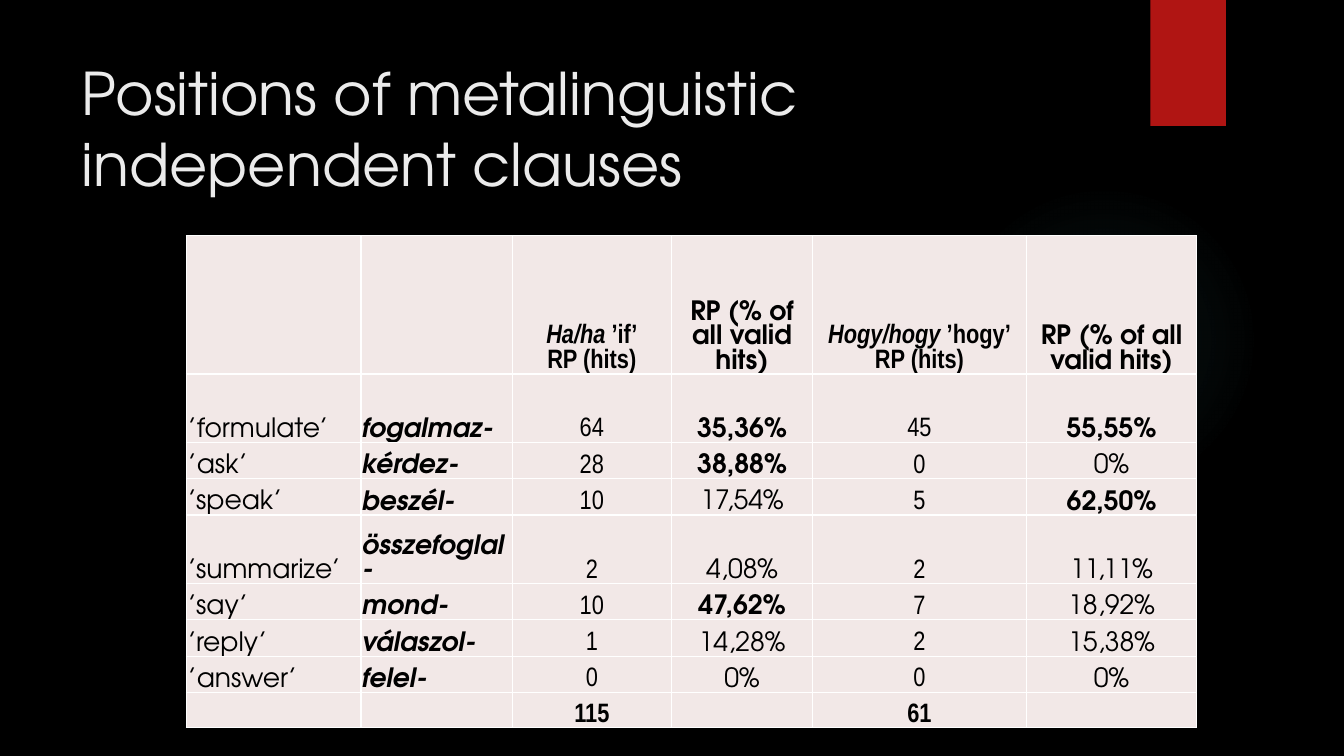
from dataclasses import dataclass

from lxml.etree import SubElement
from pptx import Presentation
from pptx.dml.color import RGBColor
from pptx.enum.shapes import MSO_SHAPE
from pptx.enum.text import MSO_ANCHOR, PP_ALIGN
from pptx.oxml import parse_xml
from pptx.oxml.ns import nsdecls, qn
from pptx.util import Inches, Pt

BLACK = RGBColor(0x00, 0x00, 0x00)
WHITE = RGBColor(0xFF, 0xFF, 0xFF)
RED = RGBColor(0xB0, 0x15, 0x13)
TEAL = RGBColor(0x50, 0xB9, 0xC1)
TITLE_GREY = RGBColor(0xEB, 0xEB, 0xEB)
CELL_PINK = RGBColor(0xF2, 0xE8, 0xE7)

SANS = "TeX Gyre Adventor"
NARROW = "Arial Narrow"
HIGH_SHARE = 30  # percentages above this are bold

COL_WIDTHS = [1.73, 1.5, 1.58, 1.4, 2.12, 1.69]
ROW_HEIGHTS = [1.37, 0.68, 0.36, 0.36, 0.68, 0.36, 0.36, 0.36, 0.35]
HIT_COLS = (2, 4)
VERB_COL = 1


@dataclass
class Run:
    text: str
    italic: bool = False


@dataclass
class Cell:
    lines: list[list[Run]]
    bold: bool = False


@dataclass
class Verb:
    gloss: str
    stem: str
    ha_hits: int
    ha_share: str
    hogy_hits: int
    hogy_share: str

    def cells(self) -> list[Cell]:
        return [plain(self.gloss), Cell([[Run(self.stem, True)]], True),
                plain(str(self.ha_hits)), share(self.ha_share),
                plain(str(self.hogy_hits)), share(self.hogy_share)]


def plain(text: str, bold: bool = False) -> Cell:
    return Cell([[Run(text)]] if text else [[]], bold)


def share(text: str) -> Cell:
    return plain(text, float(text.rstrip("%").replace(",", ".")) > HIGH_SHARE)


def hits_header(word: str, gloss: str) -> Cell:
    return Cell([[Run(word + " ", True), Run(gloss)], [Run("RP (hits)")]], True)


VERBS = [
    Verb("’formulate’", "fogalmaz-", 64, "35,36%", 45, "55,55%"),
    Verb("’ask’", "kérdez-", 28, "38,88%", 0, "0%"),
    Verb("’speak’", "beszél-", 10, "17,54%", 5, "62,50%"),
    Verb("’summarize’", "összefoglal-", 2, "4,08%", 2, "11,11%"),
    Verb("’say’", "mond-", 10, "47,62%", 7, "18,92%"),
    Verb("’reply’", "válaszol-", 1, "14,28%", 2, "15,38%"),
    Verb("’answer’", "felel-", 0, "0%", 0, "0%"),
]
SHARE_HEADER = plain("RP (% of all valid hits)", True)
HEADER = [plain(""), plain(""), hits_header("Ha/ha", "’if’"), SHARE_HEADER,
          hits_header("Hogy/hogy", "’hogy’"), SHARE_HEADER]
TOTALS = [plain(text, True) for text in ("", "", "115", "", "61", "")]


def add_glow(s) -> None:
    """Faint radial glow, fading to nothing."""
    sp = s.shapes.add_shape(MSO_SHAPE.OVAL, Inches(9.41), Inches(1.83),
                            Inches(3.08), Inches(3.08))
    sp.shadow.inherit = False
    sp.line.fill.background()
    stops = "".join(
        f'<a:gs pos="{pos}000"><a:srgbClr val="{TEAL}">'
        f'<a:alpha val="{alpha}000"/></a:srgbClr></a:gs>'
        for pos, alpha in ((0, 7), (36, 6), (69, 0), (100, 0)))
    grad = parse_xml(
        f'<a:gradFill {nsdecls("a")}><a:gsLst>{stops}</a:gsLst><a:path path="circle">'
        '<a:fillToRect l="50000" t="50000" r="50000" b="50000"/></a:path></a:gradFill>')
    sp._element.spPr.find(qn("a:prstGeom")).addnext(grad)


def add_ribbon(s) -> None:
    sp = s.shapes.add_shape(MSO_SHAPE.RECTANGLE, Inches(11.41), 0,
                            Inches(0.75), Inches(1.25))
    sp.shadow.inherit = False
    sp.fill.solid()
    sp.fill.fore_color.rgb = RED
    sp.line.fill.background()


def set_title(s, text: str) -> None:
    sp = s.shapes.title
    sp.left, sp.top, sp.width, sp.height = map(Inches, (0.71, 0.5, 10.29, 1.53))
    tf = sp.text_frame
    tf.text = text
    tf.word_wrap = True
    tf.vertical_anchor = MSO_ANCHOR.MIDDLE
    p = tf.paragraphs[0]
    p.alignment = PP_ALIGN.LEFT
    p.font.name, p.font.size = SANS, Pt(42)
    p.font.color.rgb = TITLE_GREY


def format_cell(tc, cell: Cell, col: int) -> None:
    tc.margin_left = tc.margin_right = tc.margin_top = Inches(0.01)
    tc.margin_bottom = 0
    tc.vertical_anchor = MSO_ANCHOR.BOTTOM

    # White borders come before the fill in the cell properties
    tcPr = tc._tc.get_or_add_tcPr()
    for side in ("lnL", "lnR", "lnT", "lnB"):
        ln = SubElement(tcPr, qn(f"a:{side}"), w=str(Pt(1)))
        solid = SubElement(ln, qn("a:solidFill"))
        SubElement(solid, qn("a:srgbClr"), val=str(WHITE))
    tc.fill.solid()
    tc.fill.fore_color.rgb = CELL_PINK

    tf = tc.text_frame
    for i, line in enumerate(cell.lines):
        p = tf.add_paragraph() if i else tf.paragraphs[0]
        p.alignment = PP_ALIGN.CENTER if col > VERB_COL else PP_ALIGN.LEFT
        p.line_spacing = Pt(17.5)
        p.font.name = NARROW if col in HIT_COLS else SANS
        p.font.size, p.font.bold = Pt(19), cell.bold
        p.font.color.rgb = BLACK
        for run in line:
            r = p.add_run()
            r.text = run.text
            if run.italic:
                r.font.italic = True


def add_clause_table(s) -> None:
    rows = [HEADER, *(verb.cells() for verb in VERBS), TOTALS]
    frame = s.shapes.add_table(len(rows), len(COL_WIDTHS), Inches(1.85), Inches(2.34),
                               Inches(sum(COL_WIDTHS)), Inches(sum(ROW_HEIGHTS)))
    table = frame.table
    table.first_row = table.horz_banding = False
    for column, width in zip(table.columns, COL_WIDTHS):
        column.width = Inches(width)
    for i, (row, height) in enumerate(zip(rows, ROW_HEIGHTS)):
        table.rows[i].height = Inches(height)
        for col, cell in enumerate(row):
            format_cell(table.cell(i, col), cell, col)


def main() -> None:
    prs = Presentation()
    prs.slide_width, prs.slide_height = Inches(13.33), Inches(7.5)
    s = prs.slides.add_slide(prs.slide_layouts[5])
    s.background.fill.solid()
    s.background.fill.fore_color.rgb = BLACK

    # Decoration, title, table
    add_glow(s)
    add_ribbon(s)
    set_title(s, "Positions of metalinguistic independent clauses")
    add_clause_table(s)
    prs.save("out.pptx")


if __name__ == "__main__":
    main()
